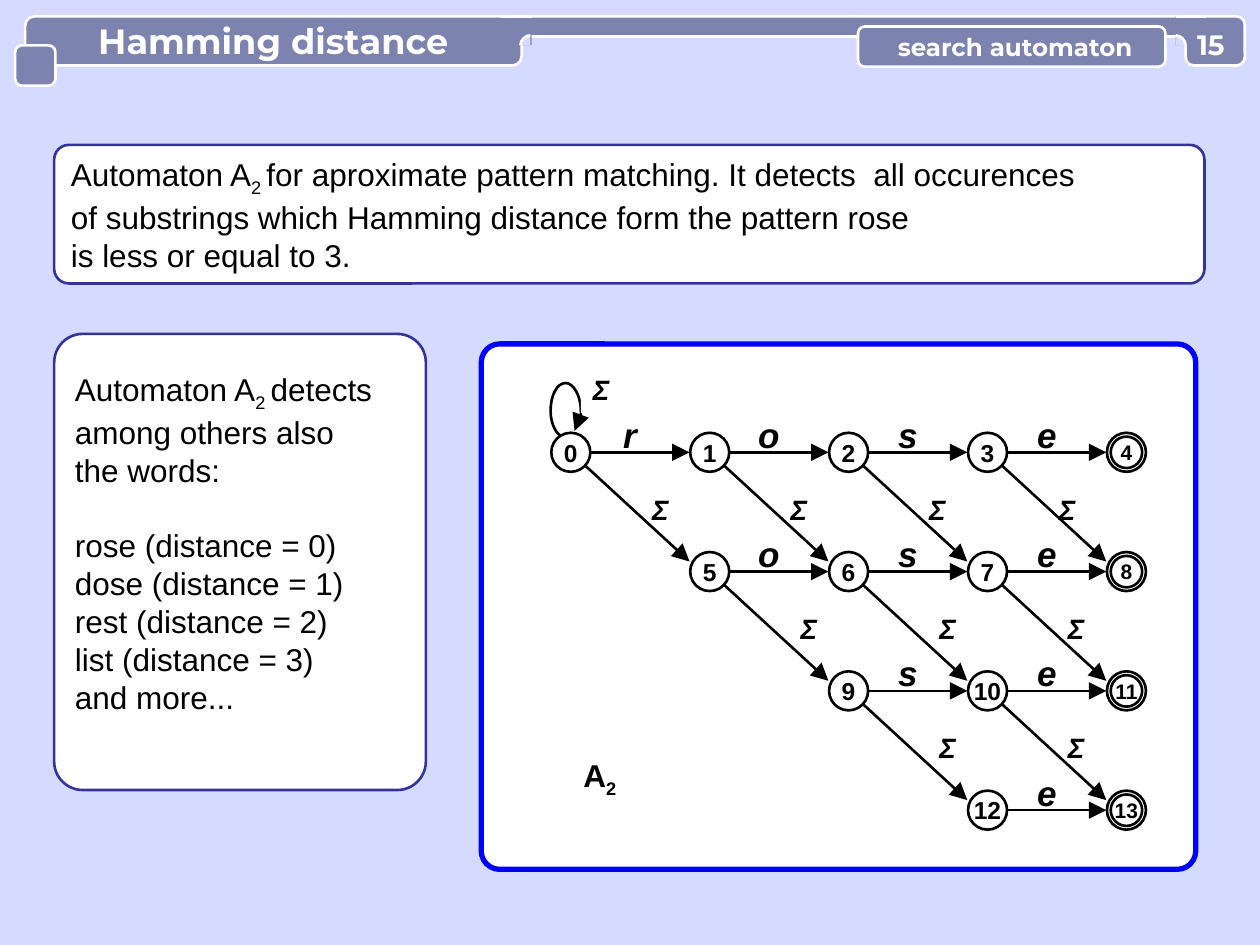
from copy import deepcopy

from pptx import Presentation
from pptx.dml.color import RGBColor
from pptx.enum.shapes import MSO_CONNECTOR as Connector, MSO_SHAPE as Shape
from pptx.enum.text import MSO_ANCHOR as Anchor, PP_ALIGN as Align
from pptx.oxml.ns import qn
from pptx.util import Inches, Pt
from lxml.etree import SubElement

BACKGROUND, BAR, WHITE, BLACK = "D5DAFF", "7D83AF", "FFFFFF", "000000"
NAVY, BLUE = "333399", "0000FF"


def colour(value):
    return RGBColor.from_string(value)


class SlideBuilder:
    body_font, header_font = "Arial", "Montserrat"
    line_width = 1.5

    def __init__(self, slide):
        self.slide = slide
        fill = slide.background.fill
        fill.solid()
        fill.fore_color.rgb = colour(BACKGROUND)

    def paint(self, shape, fill, line, width=None):
        shape.shadow.inherit = False
        if fill:
            shape.fill.solid()
            shape.fill.fore_color.rgb = colour(fill)
        else:
            shape.fill.background()
        if line:
            shape.line.color.rgb = colour(line)
            shape.line.width = Pt(width or self.line_width)
        else:
            shape.line.fill.background()

    def shape(self, kind, left, top, width, height, fill=WHITE, line=None,
              line_width=None, corner=None):
        shape = self.slide.shapes.add_shape(
            kind, Inches(left), Inches(top), Inches(width), Inches(height))
        if corner is not None:
            shape.adjustments[0] = corner
        self.paint(shape, fill, line, line_width)
        return shape

    def bar(self, left, top, width, height, corner=0.17):
        return self.shape(Shape.ROUNDED_RECTANGLE, left, top, width, height,
                          BAR, WHITE, corner=corner)

    def text(self, shape, lines, size, font=None, ink=BLACK, bold=False,
             italic=False, align=Align.CENTER, anchor=Anchor.MIDDLE,
             wrap=False, inset=None):
        """Each line is a string; "_" sets off a subscript part."""
        frame = shape.text_frame
        frame.word_wrap, frame.vertical_anchor = wrap, anchor
        if inset is not None:
            frame.margin_left = frame.margin_right = Inches(inset)
            frame.margin_top = frame.margin_bottom = Inches(inset)
        for index, line in enumerate(lines):
            paragraph = frame.add_paragraph() if index else frame.paragraphs[0]
            paragraph.alignment = align
            paragraph.font.name = font or self.body_font
            paragraph.font.size = Pt(size)
            paragraph.font.bold, paragraph.font.italic = bold, italic
            paragraph.font.color.rgb = colour(ink)
            for part, words in enumerate(line.split("_")):
                run = paragraph.add_run()
                run.text = words
                run.font._element.set("kern", "0")
                if part % 2:
                    run.font._element.set("baseline", "-25000")
        return frame

    def text_box(self, left, top, width, height, line, size, **style):
        box = self.slide.shapes.add_textbox(
            Inches(left), Inches(top), Inches(width), Inches(height))
        self.text(box, [line], size, **style)

    def label(self, left, top, symbol, size):
        square = self.shape(Shape.RECTANGLE, left, top, 0.32, 0.32)
        self.text(square, [symbol], size, bold=True, italic=True,
                  anchor=Anchor.TOP, wrap=True, inset=0)

    def line(self, start, end, ink=BLACK, arrow=True):
        connector = self.slide.shapes.add_connector(
            Connector.STRAIGHT, *map(Inches, (*start, *end)))
        connector.line.color.rgb = colour(ink)
        connector.line.width = Pt(self.line_width)
        if arrow:
            self.arrowhead(connector, "tailEnd")
        SubElement(connector._element.spPr, qn("a:effectLst"))

    def arrowhead(self, shape, end):
        SubElement(shape.line._get_or_add_ln(), qn(f"a:{end}"),
                   type="triangle", w="lg", len="lg")

    def curve(self, points, line, fill=None, centre=None):
        """Bezier curve; a fill covers the sector up to the centre."""
        corners = points + ([centre] if centre else [])
        start, *others = [(Inches(x), Inches(y)) for x, y in corners]
        builder = self.slide.shapes.build_freeform(*start, scale=1.0)
        builder.add_line_segments(others, close=bool(centre))
        shape = builder.convert_to_shape()
        self.paint(shape, fill, line)

        # Turn each three segments into one Bezier
        outline = shape._element.find(".//" + qn("a:path"))
        segments = outline.findall(qn("a:lnTo"))[:len(points) - 1]
        for index, segment in enumerate(segments):
            if index % 3 == 0:
                bezier = SubElement(outline, qn("a:cubicBezTo"))
                segment.addprevious(bezier)
            bezier.append(segment[0])
            outline.remove(segment)
        # Stroke the curve only, fill the whole sector
        if centre:
            sector = deepcopy(outline)
            outline.addnext(sector)
            sector.set("stroke", "0")
            outline.set("fill", "none")
            for tag in ("a:lnTo", "a:close"):
                outline.remove(outline.find(qn(tag)))
        return shape

    def bar_joint(self, left, notch_x, side):
        self.shape(Shape.RECTANGLE, left, 0.13, 0.24, 0.23, BAR)
        self.line((left, 0.13), (left + 0.24, 0.13), WHITE, arrow=False)
        end_x = notch_x + side * 0.08
        self.curve([(notch_x, 0.28), (notch_x + side * 0.04, 0.28),
                    (end_x, 0.32), (end_x, 0.36)],
                   WHITE, BACKGROUND, (notch_x, 0.36))

    def state(self, x, y, number, final):
        def circle(size):
            return self.shape(Shape.OVAL, x - size / 2, y - size / 2,
                              size, size, line=BLACK)
        shape = circle(0.31)
        if final:
            shape = circle(0.25)
        self.text(shape, [str(number)], 12 if final else 14, bold=True)


def draw_automaton(builder):
    pattern = "rose"
    rows, columns = 4, len(pattern) + 1
    radius = 0.16

    def centre(row, column):
        return 4.53 + column * 4.41 / 4, 3.59 + row * 2.84 / 3

    # Substitution labels, row by row
    sigma_rows = [(3.91, (5.08, 6.18, 7.28, 8.31)),
                  (4.85, (6.26, 7.36, 8.38)),
                  (5.8, (7.36, 8.38))]
    for top, lefts in sigma_rows:
        for left in lefts:
            builder.label(left, top, "Σ", 16)

    # Loop on the start state
    loop = builder.curve([
        (4.56, 3.42), (4.59, 3.38), (4.61, 3.32), (4.61, 3.26),
        (4.61, 3.14), (4.55, 3.04), (4.49, 3.04),
        (4.42, 3.04), (4.37, 3.14), (4.37, 3.26),
        (4.37, 3.37), (4.42, 3.47), (4.49, 3.47)], BLACK)
    builder.arrowhead(loop, "headEnd")

    # Diagonal transitions
    for row in range(rows - 1):
        for column in range(row, columns - 1):
            x, y = centre(row + 1, column + 1)
            builder.line(centre(row, column), (x - radius, y - radius / 2))

    # States and matching transitions
    number = 0
    for row in range(rows):
        for column in range(row, columns):
            x, y = centre(row, column)
            final = column == columns - 1
            builder.state(x, y, number, final)
            number += 1
            if not final:
                next_x, _ = centre(row, column + 1)
                builder.label(x + 0.31, y - 0.31, pattern[column], 20)
                builder.line((x + radius, y), (next_x - radius, y))
    builder.label(4.61, 2.96, "Σ", 16)


def main():
    presentation = Presentation()
    presentation.slide_width, presentation.slide_height = Inches(10), Inches(7.5)
    builder = SlideBuilder(
        presentation.slides.add_slide(presentation.slide_layouts[6]))
    rounded = Shape.ROUNDED_RECTANGLE

    # Panels
    intro = builder.shape(rounded, 0.43, 1.15, 9.13, 1.1, line=NAVY, corner=0.106)
    builder.text(intro, [
        "Automaton A_2 _for aproximate pattern matching. It detects  all occurences",
        "of substrings which Hamming distance form the pattern rose",
        "is less or equal to 3."], 18, align=Align.LEFT, wrap=True)
    builder.shape(rounded, 3.82, 2.73, 5.67, 4.17, line=BLUE, line_width=3,
                  corner=0.035)
    words = builder.shape(rounded, 0.43, 2.65, 2.95, 3.62, line=NAVY, corner=0.077)
    frame = builder.text(words, [
        "Automaton A_2 _detects", "among others also", "the words:",
        "rose (distance = 0)", "dose (distance = 1)", "rest (distance = 2)",
        "list (distance = 3)", "and more..."],
        18, align=Align.LEFT, anchor=Anchor.TOP, wrap=True)
    frame.margin_top = Inches(0.22)
    frame.paragraphs[3].space_before = Pt(21.6)
    builder.text_box(4.52, 5.95, 0.48, 0.4, "A_2", 18, bold=True,
                     anchor=Anchor.TOP)

    # Header bar
    header = {"font": builder.header_font, "ink": WHITE, "bold": True}
    title = builder.bar(0.2, 0.13, 3.94, 0.39, 0.188)
    builder.text(title, ["Hamming distance"], 20, **header)
    builder.bar(4.06, 0.13, 5.43, 0.16, 0.5)
    builder.bar_joint(3.98, 4.21, -1)
    builder.bar(0.12, 0.36, 0.32, 0.32)
    builder.bar(9.41, 0.13, 0.47, 0.39)
    builder.bar_joint(9.33, 9.33, 1)
    topic = builder.bar(6.81, 0.21, 2.44, 0.32)
    builder.text(topic, [" search automaton"], 14, **header)
    builder.text_box(9.41, 0.22, 0.4, 0.27, "15", 16, wrap=True, inset=0,
                     **header)

    draw_automaton(builder)
    presentation.save("out.pptx")


if __name__ == "__main__":
    main()
